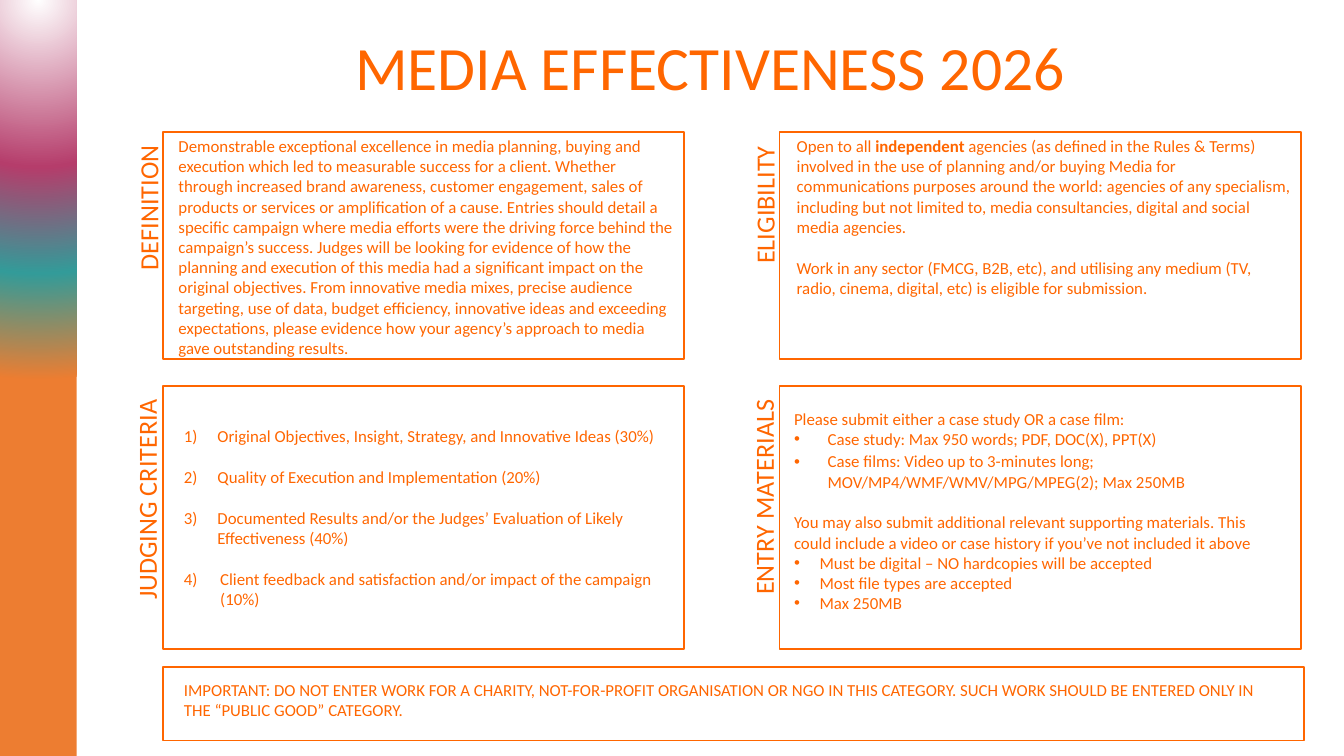
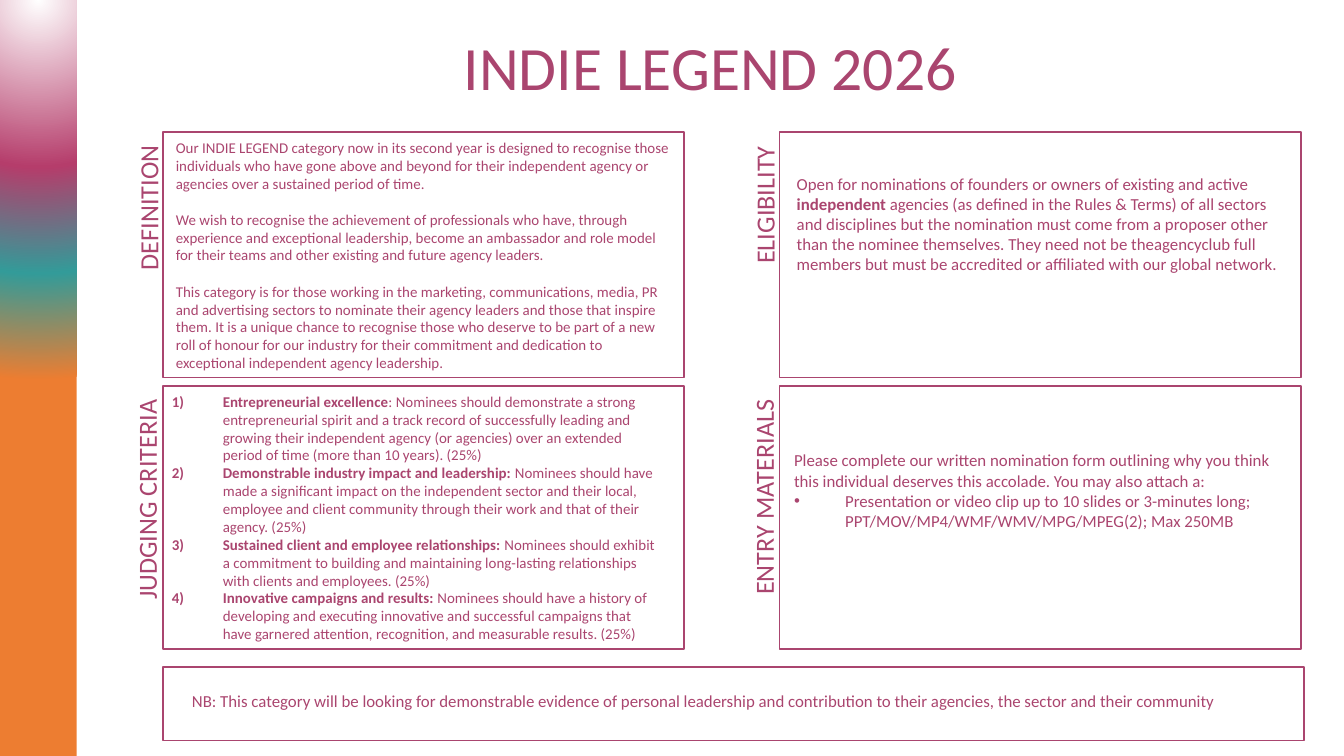
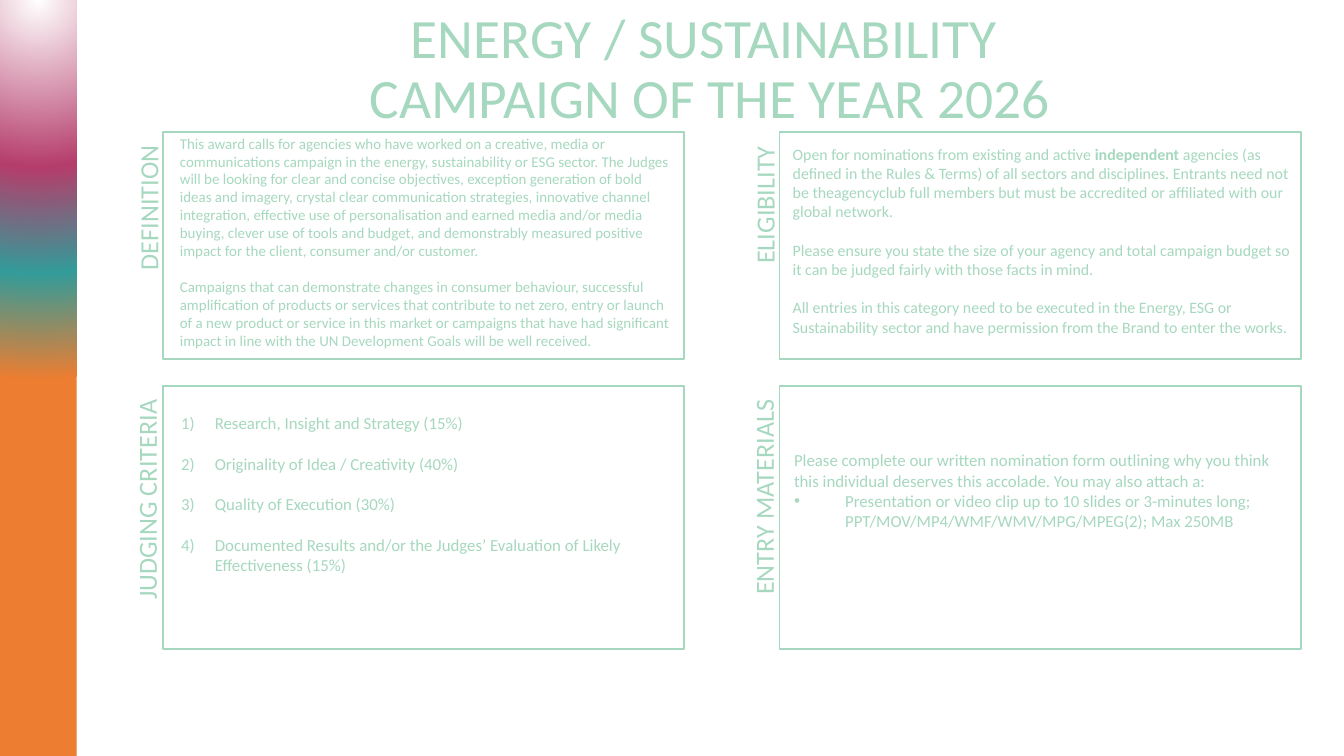
from dataclasses import dataclass

from lxml import etree
from pptx import Presentation
from pptx.dml.color import RGBColor
from pptx.enum.shapes import MSO_SHAPE
from pptx.enum.text import MSO_ANCHOR, PP_ALIGN
from pptx.oxml.ns import qn
from pptx.util import Inches, Pt

RECTANGLE = MSO_SHAPE.RECTANGLE
TOP, MIDDLE = MSO_ANCHOR.TOP, MSO_ANCHOR.MIDDLE
LEFT, CENTER, RIGHT = PP_ALIGN.LEFT, PP_ALIGN.CENTER, PP_ALIGN.RIGHT

# Shared look
FONT = "Calibri"
LINE_HEIGHT = 1.22
SLIDE_WIDTH = 10
SLIDE_HEIGHT = SLIDE_WIDTH * 9 / 16
BAND_WIDTH = 0.57
BAND_STOPS = ((0, "FFFFFF"), (44, "B53D6B"), (72, "339B99"), (100, "ED7D31"))
BAND_CENTER = {"l": 50, "t": -80, "r": 50, "b": 180}

# Panel grid
LEFT_COLUMN, RIGHT_COLUMN = 1.21, 5.8
UPPER_ROW, LOWER_ROW = 0.98, 2.87
PANEL_WIDTH, LOWER_HEIGHT = 3.88, 1.96


@dataclass(frozen=True)
class Box:
    left: float
    top: float
    width: float
    height: float

    def lengths(self) -> list:
        return [Inches(side) for side in (self.left, self.top, self.width, self.height)]


@dataclass(frozen=True)
class Para:
    """Text between asterisks is bold; gap counts blank lines above."""
    text: str
    marker: str = ""
    indent: float = 0
    gap: float = 0


@dataclass(frozen=True)
class Block:
    box: Box
    size: float
    paras: tuple


@dataclass(frozen=True)
class Category:
    title: tuple
    title_size: float
    color: str
    upper_height: float
    blocks: tuple
    has_note: bool = True


LABELS = (
    ("DEFINITION", Box(0.26, 1.66, 1.69, 0.34)),
    ("ELIGIBILITY", Box(4.88, 1.63, 1.62, 0.34)),
    ("JUDGING CRITERIA", Box(0.08, 3.72, 2.03, 0.34)),
    ("ENTRY MATERIALS", Box(4.57, 3.82, 2.23, 0.34)),
)
NOTE_FRAME = Box(LEFT_COLUMN, 4.96, 8.49, 0.55)

NOMINATION_MATERIALS = Block(Box(5.81, 3.3, 3.84, 1.01), 9, (
    Para("Please complete our written nomination form outlining why you think this "
         "individual deserves this accolade. You may also attach a:"),
    Para("Presentation or video clip up to 10 slides or 3-minutes long; "
         "PPT/MOV/MP4/WMF/WMV/MPG/MPEG(2); Max 250MB", "•", 0.38),
))

CATEGORIES = (
    Category(("MEDIA EFFECTIVENESS 2026",), 33, "FF6600", 1.69, (
        Block(Box(1.23, 0.96, 3.87, 1.92), 9, (
            Para("Demonstrable exceptional excellence in media planning, buying and execution "
                 "which led to measurable success for a client. Whether through increased brand "
                 "awareness, customer engagement, sales of products or services or amplification "
                 "of a cause. Entries should detail a specific campaign where media efforts were "
                 "the driving force behind the campaign’s success. Judges will be looking for "
                 "evidence of how the planning and execution of this media had a significant "
                 "impact on the original objectives. From innovative media mixes, precise "
                 "audience targeting, use of data, budget efficiency, innovative ideas and "
                 "exceeding expectations, please evidence how your agency’s approach to media "
                 "gave outstanding results."),
        )),
        Block(Box(5.83, 0.96, 3.87, 1.31), 9, (
            Para("Open to all *independent* agencies (as defined in the Rules & Terms) involved "
                 "in the use of planning and/or buying Media for communications purposes around "
                 "the world: agencies of any specialism, including but not limited to, media "
                 "consultancies, digital and social media agencies."),
            Para("Work in any sector (FMCG, B2B, etc), and utilising any medium (TV, radio, "
                 "cinema, digital, etc) is eligible for submission.", gap=1),
        )),
        Block(Box(1.27, 3.12, 3.84, 1.46), 9, (
            Para("Original Objectives, Insight, Strategy, and Innovative Ideas (30%)", "1)", 0.25),
            Para("Quality of Execution and Implementation (20%)", "1)", 0.25, 1),
            Para("Documented Results and/or the Judges’ Evaluation of Likely Effectiveness (40%)",
                 "1)", 0.25, 1),
            Para("Client feedback and satisfaction and/or impact of the campaign (10%)",
                 "1)", 0.27, 1),
        )),
        Block(Box(5.81, 2.99, 3.84, 1.78), 9, (
            Para("Please submit either a case study OR a case film:"),
            Para("Case study: Max 950 words; PDF, DOC(X), PPT(X)", "•", 0.25),
            Para("Case films: Video up to 3-minutes long; MOV/MP4/WMF/WMV/MPG/MPEG(2); Max 250MB",
                 "•", 0.25, 0.11),
            Para("You may also submit additional relevant supporting materials. This could "
                 "include a video or case history if you’ve not included it above", gap=1),
            Para("Must be digital – NO hardcopies will be accepted", "•", 0.19),
            Para("Most file types are accepted", "•", 0.19),
            Para("Max 250MB", "•", 0.19),
        )),
        Block(Box(1.27, 5.01, 8.36, 0.4), 9, (
            Para("IMPORTANT: DO NOT ENTER WORK FOR A CHARITY, NOT-FOR-PROFIT ORGANISATION OR NGO "
                 "IN THIS CATEGORY. SUCH WORK SHOULD BE ENTERED ONLY IN THE “PUBLIC GOOD” "
                 "CATEGORY."),
        )),
    )),
    Category(("INDIE LEGEND 2026",), 33, "AA456F", 1.83, (
        Block(Box(1.21, 0.98, 3.89, 1.85), 8, (
            Para("Our INDIE LEGEND category now in its second year is designed to recognise those "
                 "individuals who have gone above and beyond for their independent agency or "
                 "agencies over a sustained period of time."),
            Para("We wish to recognise the achievement of professionals who have, through "
                 "experience and exceptional leadership, become an ambassador and role model for "
                 "their teams and other existing and future agency leaders.", gap=1),
            Para("This category is for those working in the marketing, communications, media, PR "
                 "and advertising sectors to nominate their agency leaders and those that inspire "
                 "them. It is a unique chance to recognise those who deserve to be part of a new "
                 "roll of honour for our industry for their commitment and dedication to "
                 "exceptional independent agency leadership.", gap=1),
        )),
        Block(Box(5.83, 1.24, 3.87, 1.31), 9, (
            Para("Open for nominations of founders or owners of existing and active *independent* "
                 "agencies (as defined in the Rules & Terms) of all sectors and disciplines but "
                 "the nomination must come from a proposer other than the nominee themselves. "
                 "They need not be theagencyclub full members but must be accredited or "
                 "affiliated with our global network."),
        )),
        Block(Box(1.18, 2.87, 3.84, 1.99), 8, (
            Para("*Entrepreneurial excellence*: Nominees should demonstrate a strong "
                 "entrepreneurial spirit and a track record of successfully leading and growing "
                 "their independent agency (or agencies) over an extended period of time (more "
                 "than 10 years). (25%)", "1)", 0.38),
            Para("*Demonstrable industry impact and leadership:* Nominees should have made a "
                 "significant impact on the independent sector and their local, employee and "
                 "client community through their work and that of their agency. (25%)",
                 "1)", 0.38),
            Para("*Sustained client and employee relationships:* Nominees should exhibit a "
                 "commitment to building and maintaining long-lasting relationships with clients "
                 "and employees. (25%)", "1)", 0.38),
            Para("*Innovative campaigns and results:* Nominees should have a history of "
                 "developing and executing innovative and successful campaigns that have garnered "
                 "attention, recognition, and measurable results. (25%)", "1)", 0.38),
        )),
        NOMINATION_MATERIALS,
        Block(Box(1.33, 5.09, 8.38, 0.25), 9, (
            Para("NB: This category will be looking for demonstrable evidence of personal "
                 "leadership and contribution to their agencies, the sector and their community"),
        )),
    )),
    Category(("ENERGY / SUSTAINABILITY ", "CAMPAIGN OF THE YEAR 2026"), 29.7, "A6D8BF", 1.69, (
        Block(Box(1.24, 0.95, 3.87, 1.72), 8, (
            Para("This award calls for agencies who have worked on a creative, media or "
                 "communications campaign in the energy, sustainability or ESG sector. The Judges "
                 "will be looking for clear and concise objectives, exception generation of bold "
                 "ideas and imagery, crystal clear communication strategies, innovative channel "
                 "integration, effective use of personalisation and earned media and/or media "
                 "buying, clever use of tools and budget, and demonstrably measured positive "
                 "impact for the client, consumer and/or customer."),
            Para("Campaigns that can demonstrate changes in consumer behaviour, successful "
                 "amplification of products or services that contribute to net zero, entry or "
                 "launch of a new product or service in this market or campaigns that have had "
                 "significant impact in line with the UN Development Goals will be well received.",
                 gap=1),
        )),
        Block(Box(5.8, 1.03, 3.94, 1.53), 8.5, (
            Para("Open for nominations from existing and active *independent* agencies (as "
                 "defined in the Rules & Terms) of all sectors and disciplines. Entrants need not "
                 "be theagencyclub full members but must be accredited or affiliated with our "
                 "global network."),
            Para("Please ensure you state the size of your agency and total campaign budget so it "
                 "can be judged fairly with those facts in mind.", gap=1),
            Para("All entries in this category need to be executed in the Energy, ESG or "
                 "Sustainability sector and have permission from the Brand to enter the works.",
                 gap=1),
        )),
        Block(Box(1.25, 3.02, 3.75, 1.31), 9, (
            Para("Research, Insight and Strategy (15%)", "1)", 0.25),
            Para("Originality of Idea / Creativity (40%)", "1)", 0.25, 1),
            Para("Quality of Execution (30%)", "1)", 0.25, 1),
            Para("Documented Results and/or the Judges’ Evaluation of Likely Effectiveness (15%)",
                 "1)", 0.25, 1),
        )),
        NOMINATION_MATERIALS,
    ), has_note=False),
)


def rgb(color: str) -> RGBColor:
    return RGBColor.from_string(color)


def add_span(para, text: str, size: float, color: str, bold: bool = False) -> None:
    span = para.add_run()
    span.text = text
    for name, value in {"name": FONT, "size": Pt(size), "bold": bold}.items():
        setattr(span.font, name, value)
    span.font.color.rgb = rgb(color)


def set_marker(para, marker: str, indent: float) -> None:
    """Give the paragraph a hanging bullet or number."""
    properties = para._p.get_or_add_pPr()
    properties.set("marL", str(Inches(indent)))
    properties.set("indent", str(-Inches(indent)))
    if marker == "•":
        etree.SubElement(properties, qn("a:buFont"), typeface="Arial")
        etree.SubElement(properties, qn("a:buChar"), char=marker)
    else:
        etree.SubElement(properties, qn("a:buFont"), typeface=FONT)
        etree.SubElement(properties, qn("a:buAutoNum"), type="arabicParenR")


def add_text(page, block: Block, color: str, alignment=LEFT, rotation: float = 0) -> None:
    shape = page.shapes.add_textbox(*block.box.lengths())
    shape.rotation = rotation
    frame = shape.text_frame
    for name, value in {"word_wrap": True, "vertical_anchor": TOP}.items():
        setattr(frame, name, value)
    for index, content in enumerate(block.paras):
        para = frame.add_paragraph() if index else frame.paragraphs[0]
        para.alignment = alignment
        if content.gap:
            para.space_before = Pt(round(content.gap * block.size * LINE_HEIGHT, 1))
        if content.marker:
            set_marker(para, content.marker, content.indent)
        for position, part in enumerate(content.text.split("*")):
            if part:
                add_span(para, part, block.size, color, bold=position % 2 == 1)


def add_frame(page, box: Box, color: str) -> None:
    frame = page.shapes.add_shape(RECTANGLE, *box.lengths())
    frame.shadow.inherit = False
    frame.fill.background()
    frame.line.color.rgb = rgb(color)
    frame.line.width = Pt(1)


def add_band(page) -> None:
    band = page.shapes.add_shape(RECTANGLE, *Box(0, 0, BAND_WIDTH, SLIDE_HEIGHT).lengths())
    band.shadow.inherit = False
    band.line.fill.background()
    # Radial gradient centred above the slide
    gradient = etree.Element(qn("a:gradFill"), rotWithShape="1")
    stops = etree.SubElement(gradient, qn("a:gsLst"))
    for position, color in BAND_STOPS:
        stop = etree.SubElement(stops, qn("a:gs"), pos=str(position * 1000))
        etree.SubElement(stop, qn("a:srgbClr"), val=color)
    circle = etree.SubElement(gradient, qn("a:path"), path="circle")
    center = {side: str(percent * 1000) for side, percent in BAND_CENTER.items()}
    etree.SubElement(circle, qn("a:fillToRect"), center)
    band._element.spPr.find(qn("a:prstGeom")).addnext(gradient)


def set_title(page, category: Category) -> None:
    title = page.shapes.title
    box = Box(BAND_WIDTH, 0.02, SLIDE_WIDTH - BAND_WIDTH, 1.01)
    for name, value in zip(("left", "top", "width", "height"), box.lengths()):
        setattr(title, name, value)
    title.text_frame.vertical_anchor = MIDDLE
    para = title.text_frame.paragraphs[0]
    for name, value in {"alignment": CENTER, "line_spacing": 0.9}.items():
        setattr(para, name, value)
    for index, line in enumerate(category.title):
        if index:
            para.add_line_break()
        add_span(para, line, category.title_size, category.color)


def add_category(deck, category: Category) -> None:
    page = deck.slides.add_slide(deck.slide_layouts[5])
    set_title(page, category)
    # Panels
    for left in (LEFT_COLUMN, RIGHT_COLUMN):
        for top, height in ((UPPER_ROW, category.upper_height), (LOWER_ROW, LOWER_HEIGHT)):
            add_frame(page, Box(left, top, PANEL_WIDTH, height), category.color)
    if category.has_note:
        add_frame(page, NOTE_FRAME, category.color)
    # Panel texts and upright labels
    for block in category.blocks:
        add_text(page, block, category.color)
    for label, box in LABELS:
        add_text(page, Block(box, 14, (Para(label),)), category.color, RIGHT, 270)
    add_band(page)


def main() -> None:
    deck = Presentation()
    deck.slide_width, deck.slide_height = Inches(SLIDE_WIDTH), Inches(SLIDE_HEIGHT)
    for category in CATEGORIES:
        add_category(deck, category)
    deck.save("out.pptx")


if __name__ == "__main__":
    main()
